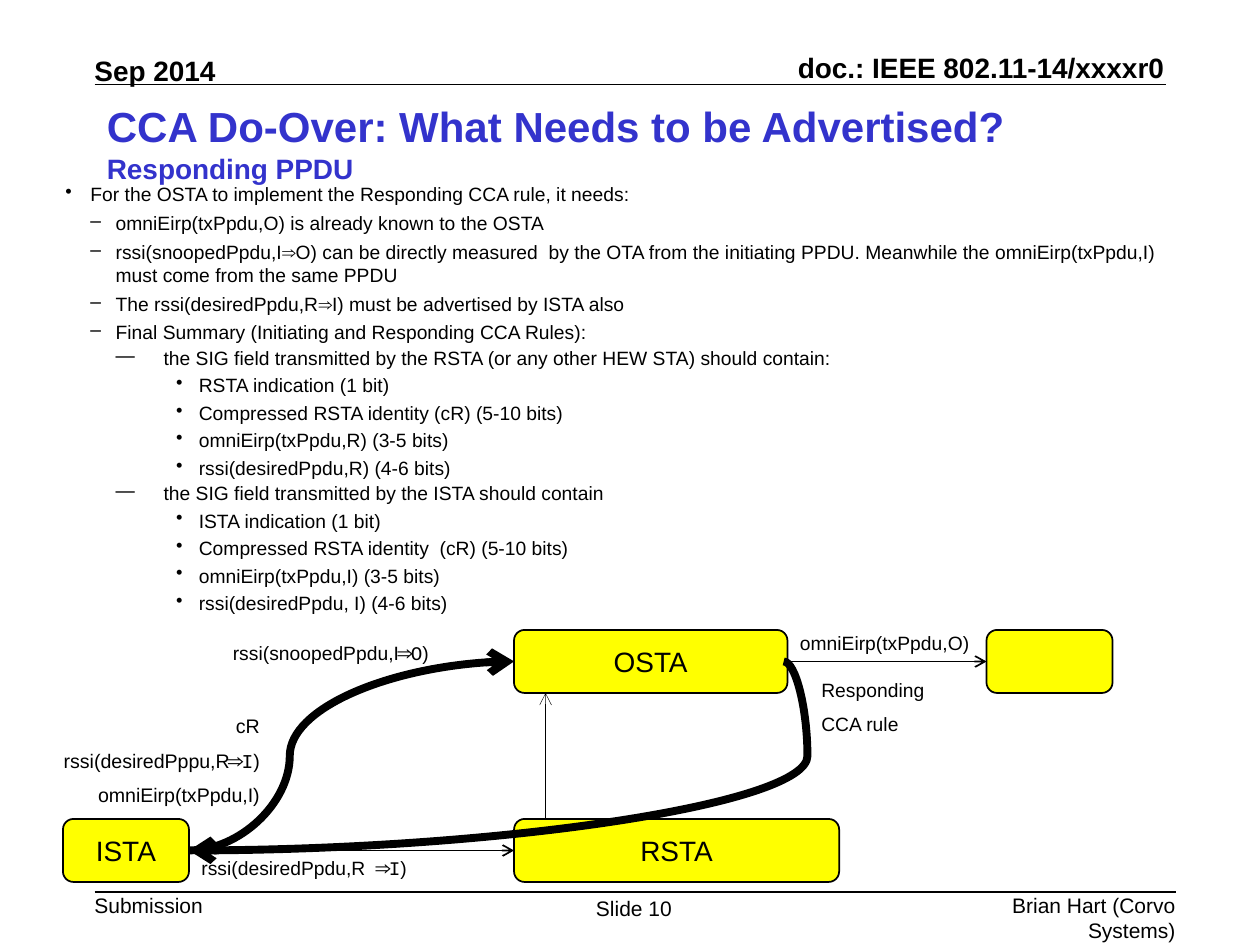
from lxml.etree import SubElement
from pptx import Presentation
from pptx.dml.color import RGBColor
from pptx.enum.shapes import MSO_CONNECTOR, MSO_SHAPE
from pptx.enum.text import MSO_ANCHOR, PP_ALIGN
from pptx.oxml.ns import qn
from pptx.util import Inches, Pt

COLORS = {"ink": "000000", "title": "3333CC", "station": "FFFF00"}
SANS, MONO = "Arial", "Courier New"
TOP, LEFT, BOTTOM, RIGHT = range(4)

# level: (bullet, left margin, hanging indent, space before in points)
LEVELS = {
    1: ("•", 0.2, 0.2, 6.3),
    2: ("–", 0.4, 0.2, 3.2),
    3: ("—", 0.78, 0.38, 1.3),
    4: ("•", 1.06, 0.18, 2.5),
}
BULLETS = [
    (1, "For the OSTA to implement the Responding CCA rule, it needs:"),
    (2, "omniEirp(txPpdu,O) is already known to the OSTA"),
    (2, "rssi(snoopedPpdu,I⇒O) can be directly measured  by the OTA from the "
        "initiating PPDU. Meanwhile the omniEirp(txPpdu,I) must come from the same PPDU"),
    (2, "The rssi(desiredPpdu,R⇒I) must be advertised by ISTA also"),
    (2, "Final Summary (Initiating and Responding CCA Rules):"),
    (3, "the SIG field transmitted by the RSTA (or any other HEW STA) should contain:"),
    (4, "RSTA indication (1 bit)"),
    (4, "Compressed RSTA identity (cR) (5-10 bits)"),
    (4, "omniEirp(txPpdu,R) (3-5 bits)"),
    (4, "rssi(desiredPpdu,R) (4-6 bits)"),
    (3, "the SIG field transmitted by the ISTA should contain"),
    (4, "ISTA indication (1 bit)"),
    (4, "Compressed RSTA identity  (cR) (5-10 bits)"),
    (4, "omniEirp(txPpdu,I) (3-5 bits)"),
    (4, "rssi(desiredPpdu, I) (4-6 bits)"),
]


def color(name):
    return RGBColor.from_string(COLORS[name])


def add_span(para, text, size, font=SANS, bold=False, ink="ink"):
    span = para.add_run()
    span.text = text
    span.font.name, span.font.size, span.font.bold = font, Pt(size), bold
    span.font.color.rgb = color(ink)


def add_frame(page, left, top, width, height, inset=True, wrap=True):
    frame = page.shapes.add_textbox(
        Inches(left), Inches(top), Inches(width), Inches(height)).text_frame
    frame.word_wrap = wrap
    if not inset:
        frame.margin_left = frame.margin_right = 0
        frame.margin_top = frame.margin_bottom = 0
    return frame


def next_para(frame, index):
    return frame.add_paragraph() if index else frame.paragraphs[0]


def add_line(page, start, end, width=1, arrow=False, bend=None):
    """Straight line, or a curve whose middle lies at the fraction bend."""
    kind = MSO_CONNECTOR.STRAIGHT if bend is None else MSO_CONNECTOR.CURVE
    line = page.shapes.add_connector(kind, *(Inches(v) for v in (*start, *end)))
    line.line.color.rgb = color("ink")
    line.line.width = Pt(width)
    properties = line._element.spPr
    if arrow:
        SubElement(line.line._get_or_add_ln(), qn("a:tailEnd"), type="arrow")
    SubElement(properties, qn("a:effectLst"))
    if bend is not None:
        guides = properties.find(qn("a:prstGeom")).find(qn("a:avLst"))
        SubElement(guides, qn("a:gd"), name="adj1", fmla=f"val {round(bend * 100000)}")
    return line


def add_margin_text(page, box, text, size, align, bold=False):
    frame = add_frame(page, *box, inset=False, wrap=False)
    frame.vertical_anchor = MSO_ANCHOR.BOTTOM if bold else MSO_ANCHOR.TOP
    para = frame.paragraphs[0]
    para.alignment = align
    add_span(para, text, size, bold=bold)


def add_header(page, left, top, width):
    add_margin_text(page, (left, top + 0.02, 0.97, 0.27), "Sep 2014", 16,
                    PP_ALIGN.LEFT, bold=True)
    add_margin_text(page, (left + width - 3.46, top, 3.45, 0.27),
                    "doc.: IEEE 802.11-14/xxxxr0", 16, PP_ALIGN.RIGHT, bold=True)
    add_line(page, (left, top + 0.27), (left + width, top + 0.27))


def add_footer(page, left, top, width):
    add_line(page, (left, top), (left + width, top))
    add_margin_text(page, (left, top, 0.87, 0.2), "Submission", 12, PP_ALIGN.LEFT)
    add_margin_text(page, (left + 3.98, top + 0.03, 0.62, 0.2), "Slide 10", 12,
                    PP_ALIGN.LEFT)
    add_margin_text(page, (left + width - 2.03, top, 2.03, 0.2),
                    "Brian Hart (Corvo Systems)", 12, PP_ALIGN.RIGHT)


def add_title(page, left, top, width, height):
    para = add_frame(page, left, top, width, height).paragraphs[0]
    add_span(para, "CCA Do-Over: What Needs to be Advertised?", 24, bold=True, ink="title")
    para.add_line_break()
    add_span(para, "Responding PPDU", 16, bold=True, ink="title")


def add_bullets(page, left, top, width, height):
    frame = add_frame(page, left, top, width, height)
    for index, (level, text) in enumerate(BULLETS):
        bullet, margin, hanging, gap = LEVELS[level]
        para = next_para(frame, index)
        properties = para._p.get_or_add_pPr()
        properties.set("marL", str(Inches(margin)))
        properties.set("indent", str(-Inches(hanging)))
        SubElement(properties, qn("a:buChar"), char=bullet)
        para.level = level - 1
        if index:
            para.space_before = Pt(gap)
        add_span(para, text, 11)


def add_station(page, name, left, top, width, height=0.5):
    station = page.shapes.add_shape(
        MSO_SHAPE.ROUNDED_RECTANGLE,
        Inches(left), Inches(top), Inches(width), Inches(height))
    station.shadow.inherit = False
    station.fill.solid()
    station.fill.fore_color.rgb = color("station")
    station.line.color.rgb = color("ink")
    station.line.width = Pt(1)
    if name:
        para = station.text_frame.paragraphs[0]
        para.alignment = PP_ALIGN.CENTER
        add_span(para, name, 16)
    return station


def add_label(page, box, lines, size=11, align=PP_ALIGN.LEFT):
    """Each line is a list of texts; the second of three is monospaced."""
    frame = add_frame(page, *box)
    for index, texts in enumerate(lines):
        para = next_para(frame, index)
        para.alignment = align
        if index:
            para.space_before = Pt(6.3)
        for text, font in zip(texts, (SANS, MONO, SANS)):
            add_span(para, text, size, font)


def add_diagram(page, left, top):
    upper, lower = top + 0.25, top + 1.75
    ista_right, middle = left + 1, left + 3.58
    ista = add_station(page, "ISTA", left, top + 1.5, 1)
    rsta = add_station(page, "RSTA", middle, top + 1.5, 2.58)
    osta = add_station(page, "OSTA", middle, top, 2.17)
    receiver = add_station(page, "", left + 7.33, top, 1)

    for source, target, y in ((ista, rsta, lower), (osta, receiver, upper)):
        link = add_line(page, (ista_right, y), (middle, y), arrow=True)
        link.begin_connect(source, RIGHT)
        link.end_connect(target, LEFT)
    add_line(page, (middle + 0.25, top + 1.5), (middle + 0.25, top + 0.5), 0.25, arrow=True)
    add_line(page, (ista_right, lower), (middle, upper), 4.5, arrow=True, bend=0.31)
    add_line(page, (left + 5.72, upper), (ista_right, lower), 4.5, arrow=True, bend=-0.04)

    add_label(page, (left - 0.42, top + 0.62, 2.08, 0.75),
              [["cR"], ["rssi(desiredPppu,R", "⇒I", ")"], ["omniEirp(txPpdu,I)"]],
              11.2, PP_ALIGN.RIGHT)
    add_label(page, (left + 1.25, top + 0.04, 1.9, 0.38), [["rssi(snoopedPpdu,I", "⇒O", ")"]])
    add_label(page, (left + 5.92, top + 0.33, 1.75, 0.58), [["Responding"], ["CCA rule"]])
    add_label(page, (left + 5.75, top - 0.04, 2.08, 0.38), [["omniEirp(txPpdu,O)"]])
    add_label(page, (left + 1, top + 1.75, 2.19, 0.38), [["rssi(desiredPpdu,R", " ⇒I", ")"]])


def main():
    deck = Presentation()
    deck.slide_width, deck.slide_height = Inches(10), Inches(7.5)
    page = deck.slides.add_slide(deck.slide_layouts[6])
    add_header(page, 0.75, 0.4, 8.5)
    add_footer(page, 0.75, 7.08, 8.58)
    add_title(page, 0.75, 0.75, 8.5, 1.17)
    add_bullets(page, 0.42, 1.4, 9.14, 5.58)
    add_diagram(page, 0.5, 5)
    deck.save("out.pptx")


if __name__ == "__main__":
    main()
